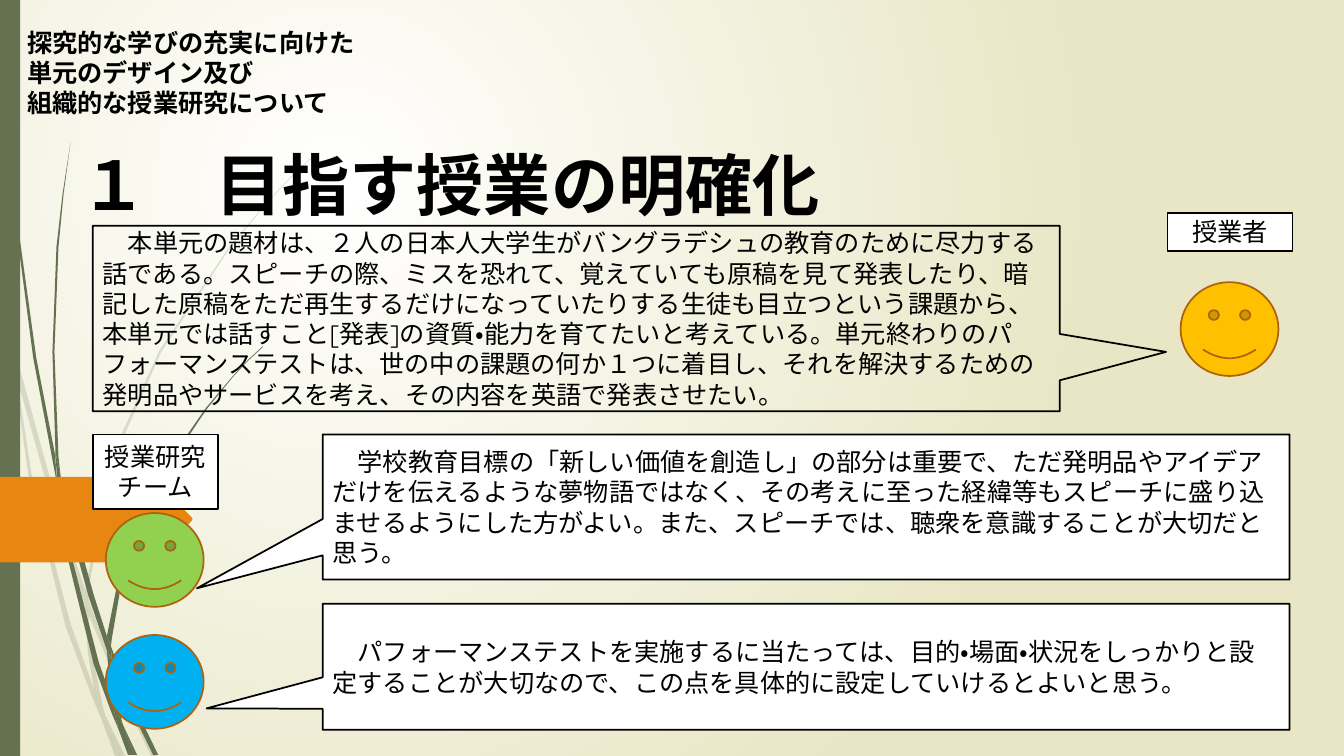
from lxml import etree
from pptx import Presentation
from pptx.dml.color import RGBColor
from pptx.enum.lang import MSO_LANGUAGE_ID
from pptx.enum.shapes import MSO_SHAPE
from pptx.enum.text import MSO_ANCHOR, MSO_AUTO_SIZE, PP_ALIGN
from pptx.oxml.ns import qn
from pptx.util import Inches, Pt

RECT = MSO_SHAPE.RECTANGLE
CALLOUT = MSO_SHAPE.RECTANGULAR_CALLOUT
SMILEY = MSO_SHAPE.SMILEY_FACE
LEFT, CENTER = PP_ALIGN.LEFT, PP_ALIGN.CENTER
TOP, MIDDLE, BOTTOM = MSO_ANCHOR.TOP, MSO_ANCHOR.MIDDLE, MSO_ANCHOR.BOTTOM
NO_AUTOFIT = MSO_AUTO_SIZE.NONE
JAPANESE = MSO_LANGUAGE_ID.JAPANESE

COLORS = {
    "white": "FFFFFF", "cream": "E8E6C4", "black": "000000",
    "moss": "647252", "orange": "E78712", "outline": "AB640D",
    "yellow": "FFC000", "green": "92D050", "blue": "00B0F0",
}

PALE_GRASS = [
    [(0.11, 3.5), (0.09, 3.22), (0, 2.82), (0, 2.99), (0.1, 3.44)],
    [(0.58, 5.22), (0.84, 5.99), (0.85, 5.86), (0.62, 5.2), (0.14, 3.45), (0.17, 3.76)],
    [(0.92, 6.07), (0.88, 5.96), (0.88, 6.1), (1.23, 6.94), (1.5, 7.5), (1.55, 7.5), (1.27, 6.92)],
    [(1.19, 7.5), (1.24, 7.5), (1.05, 7.11)],
    [(0.93, 6.83), (0.7, 6.19), (0.31, 4.69), (0.17, 3.76), (0.11, 3.5), (0.28, 4.7),
     (0.65, 6.21), (0.92, 6.93), (1.01, 7.14), (0.99, 7.07)],
    [(0.84, 5.99), (0.87, 6.46), (0.93, 6.83), (0.96, 6.92), (1.05, 7.11), (1.03, 7.06),
     (0.91, 6.46), (0.88, 6.1), (0.88, 6.08)],
    [(0.88, 5.84), (1.1, 4.62), (1.6, 3.49), (2.29, 2.45), (2.68, 1.98), (2.9, 1.75),
     (3.12, 1.54), (3.12, 1.53), (2.89, 1.75), (2.68, 1.97), (2.28, 2.44), (1.58, 3.48),
     (1.07, 4.61), (0.85, 5.84), (0.85, 5.86), (0.88, 5.96)],
    [(1.01, 7.14), (1.14, 7.5), (1.19, 7.5)],
    [(0.88, 6.08), (0.88, 6.1), (0.88, 5.96), (0.85, 5.86), (0.84, 5.99)],
    [(0.96, 6.92), (0.93, 6.83), (0.99, 7.07), (1.01, 7.14), (1.19, 7.5), (1.05, 7.11)],
]
DARK_GRASS = [
    [(0.07, 1.1), (0.17, 2.33), (0.33, 3.55), (0.56, 4.77), (0.57, 4.81), (0.55, 4.57),
     (0.55, 4.53), (0.36, 3.55), (0.19, 2.32), (0.08, 1.09), (0.05, 0.48), (0.04, 0),
     (0.03, 0), (0.04, 0.48)],
    [(0.88, 5.92), (1.06, 6.45), (1.06, 6.31), (0.93, 5.9), (0.6, 4.72), (0.64, 5.05)],
    [(1.13, 6.49), (1.1, 6.41), (1.11, 6.56), (1.32, 7.08), (1.52, 7.49), (1.57, 7.49), (1.36, 7.06)],
    [(1.1, 6.91), (0.98, 6.57), (0.72, 5.56), (0.64, 5.05), (0.57, 4.77), (0.68, 5.57),
     (0.93, 6.59), (1.11, 7.08), (1.17, 7.22), (1.16, 7.17)],
    [(0.6, 4.72), (0.58, 4.53), (0.54, 3.49), (0.58, 2.45), (0.63, 1.93), (0.7, 1.41),
     (0.62, 1.93), (0.56, 2.45), (0.52, 3.49), (0.55, 4.49)],
    [(1.33, 7.49), (1.36, 7.49), (1.22, 7.19)],
    [(0.57, 4.77), (0.64, 5.05), (0.6, 4.72), (0.55, 4.49), (0.55, 4.53)],
    [(1.11, 6.33), (1.25, 5.52), (1.58, 4.76), (2.05, 4.06), (2.31, 3.74), (2.45, 3.59),
     (2.61, 3.44), (2.6, 3.44), (2.45, 3.58), (2.31, 3.73), (2.04, 4.05), (1.56, 4.74),
     (1.22, 5.51), (1.06, 6.31), (1.1, 6.41)],
    [(1.17, 7.22), (1.27, 7.49), (1.31, 7.49)],
    [(1.06, 6.45), (1.1, 6.91), (1.16, 7.06), (1.22, 7.19), (1.21, 7.16), (1.11, 6.56)],
    [(1.06, 6.45), (1.09, 6.51), (1.11, 6.56), (1.1, 6.41), (1.06, 6.31)],
    [(1.16, 7.06), (1.1, 6.91), (1.16, 7.17), (1.17, 7.22), (1.3, 7.49), (1.33, 7.49), (1.22, 7.19)],
]
ORANGE_TAB = [(0, 4.73), (1.47, 4.73), (1.51, 4.74), (1.9, 5.13), (1.91, 5.15),
              (1.9, 5.17), (1.51, 5.56), (1.47, 5.58), (0, 5.58)]


def write_text(frame, paragraphs, font="Quicksand", size=18, bold=False,
               align=LEFT, anchor=MIDDLE, spacing=None):
    frame.word_wrap = True
    frame.auto_size = NO_AUTOFIT
    frame.vertical_anchor = anchor
    for index, words in enumerate(paragraphs):
        paragraph = frame.add_paragraph() if index else frame.paragraphs[0]
        paragraph.text = words
        paragraph.alignment = align
        if spacing:
            paragraph.line_spacing = spacing
        for run in paragraph.runs:
            run.font.name = font
            run.font.size = Pt(size)
            run.font.bold = bold
            run.font.language_id = JAPANESE
            run.font.color.rgb = RGBColor.from_string(COLORS["black"])


class LessonSlide:
    def __init__(self, deck):
        self.slide = deck.slides.add_slide(deck.slide_layouts[5])
        self.shapes = self.slide.shapes

    def backdrop(self):
        fill = self.slide.background.fill
        fill.gradient()
        for stop, color, position in zip(fill.gradient_stops, ("white", "cream"), (0, 1)):
            stop.color.rgb = RGBColor.from_string(COLORS[color])
            stop.position = position
        gradient = self.slide.element.find(".//" + qn("a:gradFill"))
        gradient.remove(gradient.find(qn("a:lin")))
        circle = etree.SubElement(gradient, qn("a:path"), {"path": "circle"})
        etree.SubElement(circle, qn("a:fillToRect"),
                         {"l": "50000", "t": "50000", "r": "100000", "b": "100000"})

    def paint(self, shape, fill, line=None, alpha=None):
        shape.shadow.inherit = False
        if fill:
            shape.fill.solid()
            shape.fill.fore_color.rgb = RGBColor.from_string(COLORS[fill])
        else:
            shape.fill.background()
        if line:
            shape.line.color.rgb = RGBColor.from_string(COLORS[line])
            shape.line.width = Pt(1.25)
        else:
            shape.line.fill.background()
        if alpha:
            color = shape.element.spPr.find(qn("a:solidFill"))[0]
            etree.SubElement(color, qn("a:alpha"), {"val": str(alpha * 1000)})

    def outline(self, points, fill, alpha=None):
        corners = [(Inches(x), Inches(y)) for x, y in points]
        builder = self.shapes.build_freeform(*corners[0])
        builder.add_line_segments(corners[1:], close=True)
        self.paint(builder.convert_to_shape(), fill, alpha=alpha)

    def preset(self, kind, box, fill, line=None):
        shape = self.shapes.add_shape(kind, *map(Inches, box))
        self.paint(shape, fill, line)
        return shape

    def title(self, words, box):
        heading = self.shapes.title
        heading.left, heading.top, heading.width, heading.height = map(Inches, box)
        self.shapes.element.append(heading.element)
        write_text(heading.text_frame, [words], font="Arial", size=48, bold=True,
                   anchor=BOTTOM, spacing=0.9)

    def theme(self, paragraphs, box):
        frame = self.shapes.add_textbox(*map(Inches, box)).text_frame
        write_text(frame, paragraphs, font="Arial", bold=True, anchor=TOP)

    def label(self, paragraphs, box):
        write_text(self.preset(RECT, box, "white", "black").text_frame, paragraphs, align=CENTER)

    def speech(self, words, box, tip, fill="white"):
        bubble = self.preset(CALLOUT, box, fill, "black")
        bubble.adjustments[0], bubble.adjustments[1] = tip
        write_text(bubble.text_frame, [words])

    def face(self, left, top, fill):
        self.preset(SMILEY, (left, top, 0.97, 0.93), fill, "outline")


def main():
    deck = Presentation()
    deck.slide_width, deck.slide_height = Inches(13.33), Inches(7.5)
    lesson = LessonSlide(deck)
    lesson.backdrop()
    for blade in PALE_GRASS:
        lesson.outline(blade, "moss", alpha=20)
    for blade in DARK_GRASS:
        lesson.outline(blade, "moss")
    lesson.preset(RECT, (0, 0, 0.2, 7.5), "moss")
    lesson.outline(ORANGE_TAB, "orange")

    lesson.title("１　目指す授業の明確化", (0.7, 1.4, 9.71, 0.88))
    lesson.theme(["探究的な学びの充実に向けた\n単元のデザイン及び", "組織的な授業研究について"],
                 (0.17, 0.22, 4.62, 0.95))
    lesson.speech(
        "　本単元の題材は、２人の日本人大学生がバングラデシュの教育のために尽力する話である。"
        "スピーチの際、ミスを恐れて、覚えていても原稿を見て発表したり、暗記した原稿をただ再生するだけに"
        "なっていたりする生徒も目立つという課題から、本単元では話すこと[発表]の資質・能力を育てたいと"
        "考えている。単元終わりのパフォーマンステストは、世の中の課題の何か１つに着目し、"
        "それを解決するための発明品やサービスを考え、その内容を英語で発表させたい。",
        (0.92, 2.24, 9.59, 1.84), (0.61, 0.18), fill=None)
    lesson.label(["授業者"], (11.58, 2.11, 1.24, 0.38))
    lesson.label(["授業研究", "チーム"], (0.92, 4.31, 1.24, 0.74))
    lesson.speech(
        "　学校教育目標の「新しい価値を創造し」の部分は重要で、ただ発明品やアイデアだけを伝えるような"
        "夢物語ではなく、その考えに至った経緯等もスピーチに盛り込ませるようにした方がよい。"
        "また、スピーチでは、聴衆を意識することが大切だと思う。",
        (3.2, 4.31, 9.59, 1.44), (-0.63, 0.56))
    lesson.speech(
        "　パフォーマンステストを実施するに当たっては、目的・場面・状況をしっかりと設定することが"
        "大切なので、この点を具体的に設定していけるとよいと思う。",
        (3.2, 5.99, 9.59, 1.25), (-0.62, 0.33))
    lesson.face(11.71, 2.8, "yellow")
    lesson.face(1.05, 5.09, "green")
    lesson.face(1.05, 6.3, "blue")
    deck.save("out.pptx")


if __name__ == "__main__":
    main()
